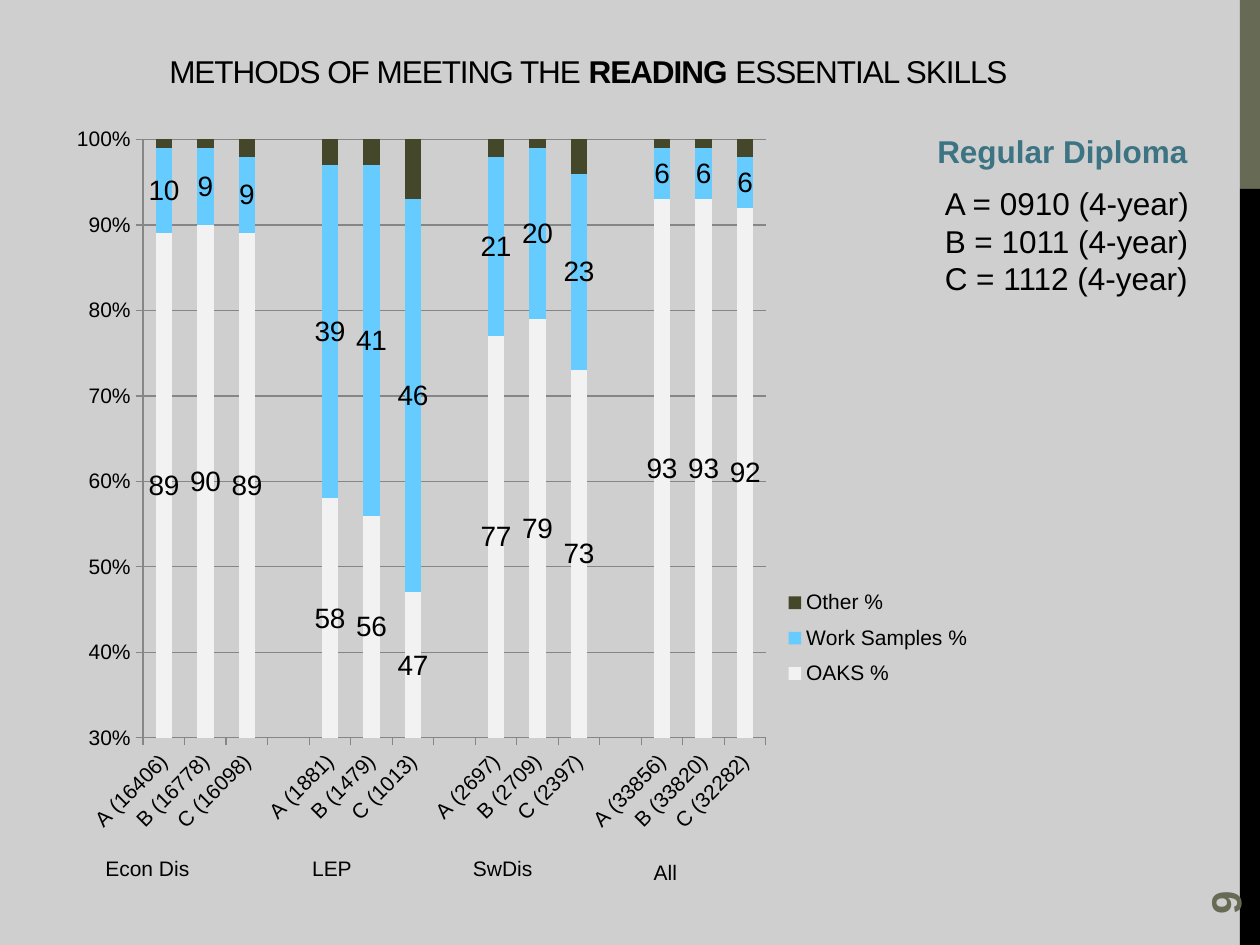
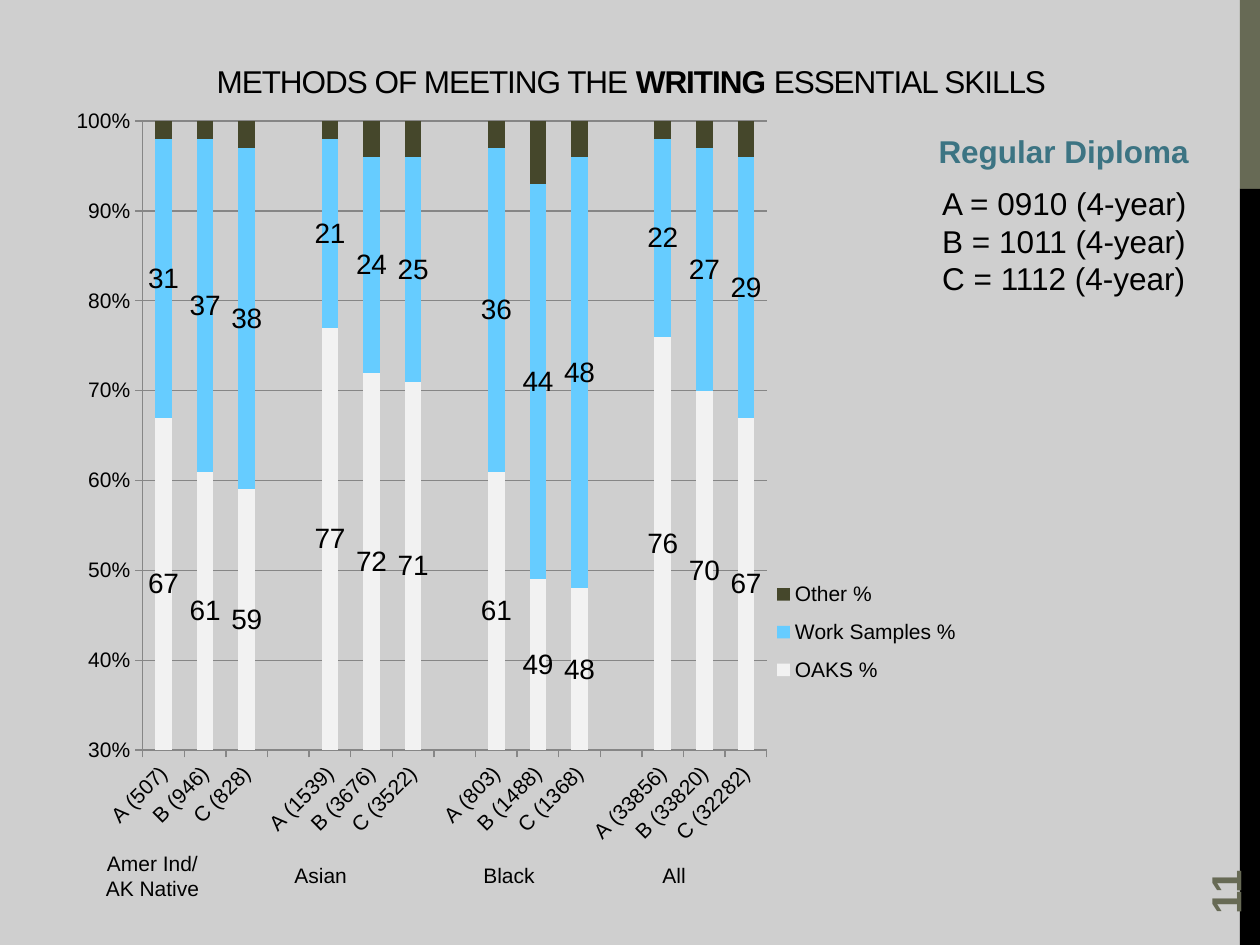
from dataclasses import dataclass

from lxml import etree
from pptx import Presentation
from pptx import util as u
from pptx.chart.data import CategoryChartData
from pptx.dml.color import RGBColor
from pptx.enum import chart as ch, shapes, text
from pptx.oxml.ns import qn


@dataclass(frozen=True)
class Theme:
    font: str = "Arial"
    back: str = "CFCFCF"
    olive: str = "676A55"
    black: str = "000000"
    teal: str = "3C7483"
    grid: str = "868686"
    bars: tuple = ("F2F2F2", "66CCFF", "45472B")
    small: int = 12
    value: int = 16
    head: int = 18
    page: int = 24


T = Theme()
SERIES = ("OAKS %", "Work Samples %", "Other %")
YEARS = "A = 0910 (4-year)\nB = 1011 (4-year)\nC = 1112 (4-year)"

READING = dict(
    page="9", word="READING", title=(0.86, 0.25),
    chart=(0.48, 0.71, 7.29, 6.02),
    plot=(0.09, 0.066, 0.678, 0.789),
    legend=(0.78, 0.645, 0.22, 0.157),
    diploma=7.34, years=7.4,
    groups=[
        ("Econ Dis", (0.67, 6.74, 1, 0.3), (16406, 16778, 16098),
         [(89, 90, 89), (10, 9, 9), (1, 1, 2)]),
        ("LEP", (2.3, 6.74, 0.67, 0.3), (1881, 1479, 1013),
         [(58, 56, 47), (39, 41, 46), (3, 3, 7)]),
        ("SwDis", (3.58, 6.74, 0.82, 0.3), (2697, 2709, 2397),
         [(77, 79, 73), (21, 20, 23), (2, 1, 4)]),
        ("All", (4.92, 6.77, 0.72, 0.3), (33856, 33820, 32282),
         [(93, 93, 92), (6, 6, 6), (1, 1, 2)]),
    ])

WRITING = dict(
    page="11", word="WRITING", title=(1.2, 0.33),
    chart=(0.47, 0.8, 7.2, 6),
    plot=(0.092, 0.027, 0.688, 0.832),
    legend=(0.78, 0.618, 0.22, 0.17),
    diploma=7.35, years=7.38,
    groups=[
        ("Amer Ind/\nAK Native", (0.67, 6.7, 1.08, 0.5), (507, 946, 828),
         [(67, 61, 59), (31, 37, 38), (2, 2, 3)]),
        ("Asian", (2.17, 6.8, 0.75, 0.3), (1539, 3676, 3522),
         [(77, 72, 71), (21, 24, 25), (2, 4, 4)]),
        ("Black", (3.67, 6.8, 0.74, 0.3), (803, 1488, 1368),
         [(61, 49, 48), (36, 44, 48), (3, 7, 4)]),
        ("All", (5.08, 6.8, 0.54, 0.3), (33856, 33820, 32282),
         [(76, 70, 67), (22, 27, 29), (2, 3, 4)]),
    ])


def rgb(code):
    return RGBColor.from_string(code)


def place(box):
    return [u.Inches(n) for n in box]


def style(font, size, color=T.black, bold=False):
    font.name = T.font
    font.size = u.Pt(size)
    font.bold = bold
    font.color.rgb = rgb(color)


def add_band(slide, box, color):
    band = slide.shapes.add_shape(shapes.MSO_SHAPE.RECTANGLE, *place(box))
    band.shadow.inherit = False
    band.fill.solid()
    band.fill.fore_color.rgb = rgb(color)
    band.line.fill.background()


def add_text(slide, box, words, size, color=T.black, bold=False,
             align=text.PP_ALIGN.LEFT, wrap=True):
    shape = slide.shapes.add_textbox(*place(box))
    frame = shape.text_frame
    frame.word_wrap = wrap
    frame.text = words
    for para in frame.paragraphs:
        para.alignment = align
        for run in para.runs:
            style(run.font, size, color, bold)
    return shape


def add_title(slide, left, top, word):
    shape = add_text(slide, (left, top, 7.62, 0.51), "", T.head)
    frame = shape.text_frame
    frame.vertical_anchor = text.MSO_ANCHOR.BOTTOM
    para = frame.paragraphs[0]
    para.alignment = text.PP_ALIGN.CENTER
    for part, bold in (("METHODS OF MEETING THE ", False),
                       (word + " ", True), ("ESSENTIAL SKILLS", False)):
        run = para.add_run()
        run.text = part
        style(run.font, T.head, bold=bold)
        run.font._element.set("spc", "-60")


def add_page(slide, number):
    shape = add_text(slide, (9, 6.44, 1.44, 0.4), number, T.page, T.olive, True)
    shape.rotation = 270
    shape.text_frame.vertical_anchor = text.MSO_ANCHOR.MIDDLE


def set_layout(parent, index, box, inner=False):
    for old in parent.findall(qn("c:layout")):
        parent.remove(old)
    layout = etree.Element(qn("c:layout"))
    manual = etree.SubElement(layout, qn("c:manualLayout"))
    pairs = [("layoutTarget", "inner")] if inner else []
    pairs += [("xMode", "edge"), ("yMode", "edge")]
    pairs += zip("xywh", box)
    for tag, val in pairs:
        etree.SubElement(manual, qn("c:" + tag)).set("val", str(val))
    parent.insert(index, layout)


def chart_data(groups):
    data = CategoryChartData(number_format="0")
    cats, rows = [], [[] for _ in SERIES]
    for _, _, counts, vals in groups:
        if cats:
            cats.append("")
            for row in rows:
                row.append(None)
        cats += [f"{key} ({count})" for key, count in zip("ABC", counts)]
        for row, part in zip(rows, vals):
            row += part
    data.categories = cats
    for name, row in zip(SERIES, rows):
        data.add_series(name, row)
    return data


def style_axis(axis):
    axis.major_tick_mark = ch.XL_TICK_MARK.OUTSIDE
    axis.minor_tick_mark = ch.XL_TICK_MARK.NONE
    axis.format.line.color.rgb = rgb(T.grid)
    style(axis.tick_labels.font, T.small)


def add_chart(slide, spec_):
    frame = slide.shapes.add_chart(ch.XL_CHART_TYPE.COLUMN_STACKED_100,
                                   *place(spec_["chart"]),
                                   chart_data(spec_["groups"]))
    chart = frame.chart
    chart.has_title = False
    style(chart.font, 10)
    plot = chart.plots[0]
    plot.gap_width, plot.overlap = 150, 100
    plot.vary_by_categories = False
    for row, color in zip(plot.series, T.bars):
        row.format.fill.solid()
        row.format.fill.fore_color.rgb = rgb(color)
        row.invert_if_negative = False
    for row in list(plot.series)[:2]:
        labels = row.data_labels
        labels.show_value = True
        labels.number_format, labels.number_format_is_linked = "0", False
        style(labels.font, T.value)

    cat, val = chart.category_axis, chart.value_axis
    style_axis(cat)
    style_axis(val)
    body = cat._element.find(qn("c:txPr")).find(qn("a:bodyPr"))
    body.set("rot", "-2700000")
    val.minimum_scale, val.maximum_scale, val.major_unit = 0.3, 1, 0.1
    val.tick_labels.number_format = "0%"
    val.tick_labels.number_format_is_linked = False
    val.has_major_gridlines = True
    val.major_gridlines.format.line.color.rgb = rgb(T.grid)

    chart.has_legend = True
    legend = chart.legend
    legend.position = ch.XL_LEGEND_POSITION.RIGHT
    legend.include_in_layout = False
    style(legend.font, T.small)
    set_layout(legend._element, 1, spec_["legend"])
    area = chart.element.find(".//" + qn("c:plotArea"))
    set_layout(area, 0, spec_["plot"], inner=True)


def add_slide(deck, page):
    slide = deck.slides.add_slide(deck.slide_layouts[6])
    slide.background.fill.solid()
    slide.background.fill.fore_color.rgb = rgb(T.back)
    add_band(slide, (9.84, 0, 0.16, 1.5), T.olive)
    add_band(slide, (9.84, 1.5, 0.16, 6), T.black)
    add_page(slide, page["page"])
    add_chart(slide, page)
    for name, box, _, _ in page["groups"]:
        add_text(slide, box, name, T.small, align=text.PP_ALIGN.CENTER)
    add_title(slide, *page["title"], page["word"])
    add_text(slide, (page["diploma"], 1, 2.21, 0.4), "Regular Diploma",
             T.head, T.teal, True, wrap=False)
    add_text(slide, (page["years"], 1.41, 2.16, 1.01), YEARS, T.head, wrap=False)


def main():
    deck = Presentation()
    deck.slide_width, deck.slide_height = u.Inches(10), u.Inches(7.5)
    for page in (READING, WRITING):
        add_slide(deck, page)
    deck.save("out.pptx")


if __name__ == "__main__":
    main()
